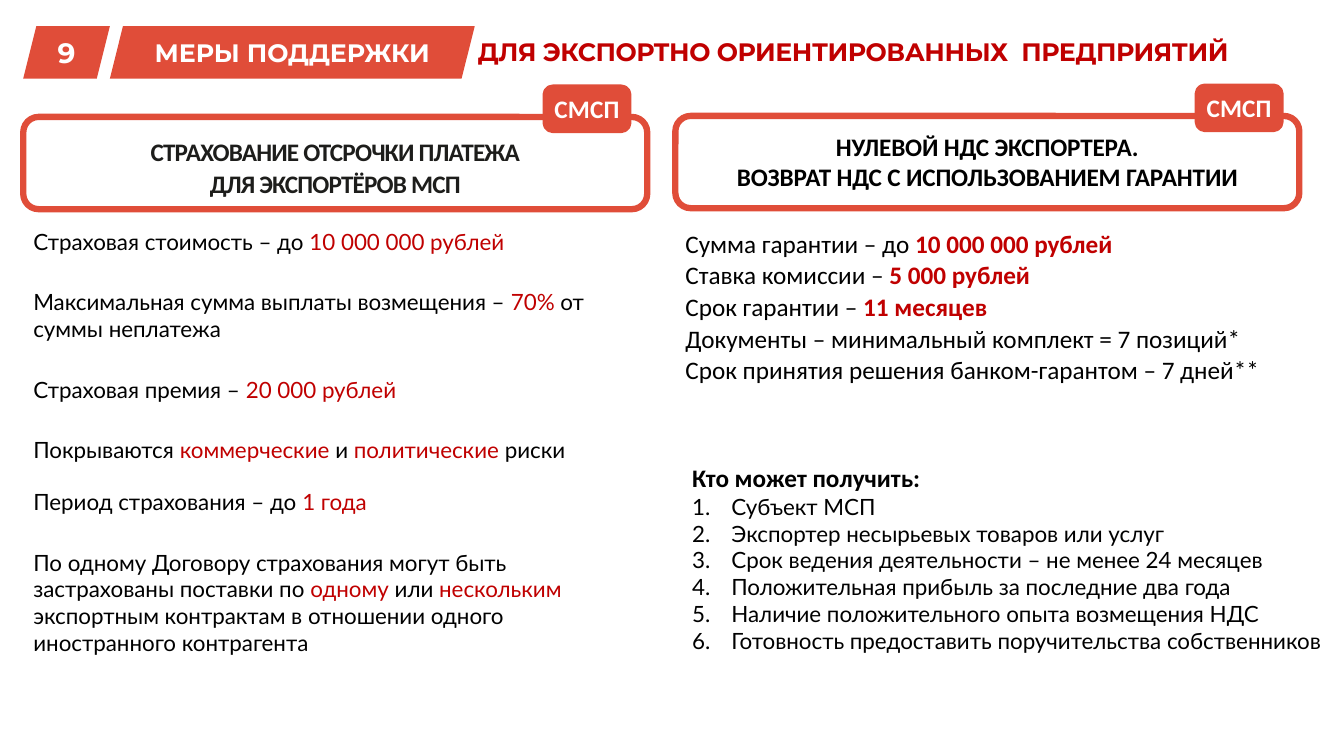
from lxml import etree
from pptx import Presentation
from pptx import util as u
from pptx.dml.color import RGBColor
from pptx.enum import shapes, text
from pptx.oxml.ns import qn

RED, ACCENT, BLACK, WHITE = "E04D39", "C00000", "000000", "FFFFFF"
CENTER, JUSTIFY = text.PP_ALIGN.CENTER, text.PP_ALIGN.JUSTIFY
MIDDLE, TOP = text.MSO_ANCHOR.MIDDLE, text.MSO_ANCHOR.TOP


def color(hex_string):
    return RGBColor.from_string(hex_string)


class SlideBuilder:
    def __init__(self, slide):
        self.slide = slide

    def paragraph(self, frame, index, content, font="Calibri", size=18, ink=BLACK,
                  bold=False, accent_bold=False, align=text.PP_ALIGN.LEFT,
                  tracking=0, before=0, after=0, line=1.0, numbered=False):
        paragraph = frame.paragraphs[0] if index == 0 else frame.add_paragraph()
        properties = paragraph._p.get_or_add_pPr()
        indent = u.Pt(28) if numbered else 0
        properties.set("marL", str(indent))
        properties.set("indent", str(-indent))
        if numbered:
            bullet = etree.SubElement(properties, qn("a:buAutoNum"))
            bullet.set("type", "arabicPeriod")
        else:
            etree.SubElement(properties, qn("a:buNone"))
        paragraph.alignment = align
        paragraph.line_spacing = line
        paragraph.space_before, paragraph.space_after = u.Pt(before), u.Pt(after)
        paragraph.font.name, paragraph.font.size = font, u.Pt(size)
        paragraph.font.bold = bold
        paragraph.font.color.rgb = color(ink)
        if tracking:
            paragraph.font._rPr.set("spc", str(round(tracking * 100)))
        for position, part in enumerate(content.split("|")):
            run = paragraph.add_run()
            run.text = part
            if position % 2:
                run.font.color.rgb = color(ACCENT)
                if accent_bold:
                    run.font.bold = True

    def fill_text(self, shape, lines, anchor=TOP, wrap=True, **style):
        frame = shape.text_frame
        frame.word_wrap, frame.vertical_anchor = wrap, anchor
        frame.auto_size = text.MSO_AUTO_SIZE.NONE
        for index, content in enumerate(lines):
            overrides = {}
            if isinstance(content, tuple):
                content, overrides = content
            self.paragraph(frame, index, content, **{**style, **overrides})

    def placeholder(self, number, box, lines, **style):
        shape = self.slide.placeholders[number]
        shape.left, shape.top, shape.width, shape.height = map(u.Pt, box)
        self.fill_text(shape, lines, **style)

    def text_box(self, box, lines, **style):
        shape = self.slide.shapes.add_textbox(*map(u.Pt, box))
        self.fill_text(shape, lines, **style)

    def shape(self, kind, box, fill=None, line=None):
        shape = self.slide.shapes.add_shape(kind, *map(u.Pt, box))
        shape.shadow.inherit = False
        if fill:
            shape.fill.solid()
            shape.fill.fore_color.rgb = color(fill)
        else:
            shape.fill.background()
        if line:
            shape.line.color.rgb = color(line)
            shape.line.width = u.Pt(4.5)
        else:
            shape.line.fill.background()
        return shape

    def label(self, shape, content, **style):
        frame = shape.text_frame
        frame.margin_left = frame.margin_right = 0
        frame.margin_top = frame.margin_bottom = 0
        self.fill_text(shape, [content], anchor=MIDDLE, wrap=False,
                       align=CENTER, ink=WHITE, bold=True, **style)

    def tab(self, left, width, content, size):
        shape = self.shape(shapes.MSO_SHAPE.PARALLELOGRAM,
                           (left, 18.7, width, 37.4), fill=RED)
        self.label(shape, content, font="Montserrat", size=size)

    def framed_heading(self, left, top):
        self.shape(shapes.MSO_SHAPE.ROUNDED_RECTANGLE,
                   (left, top, 445.7, 65.9), line=RED)
        badge = self.shape(shapes.MSO_SHAPE.FLOWCHART_ALTERNATE_PROCESS,
                           (left + 373.2, top - 20.9, 59, 30.2), fill=RED, line=RED)
        self.label(badge, "СМСП", tracking=0.1)


def main():
    presentation = Presentation()
    presentation.slide_width, presentation.slide_height = u.Pt(960), u.Pt(540)
    comparison_layout = presentation.slide_layouts[4]
    builder = SlideBuilder(presentation.slides.add_slide(comparison_layout))

    builder.tab(16.6, 61.9, "9", 20)
    builder.tab(78.5, 260.6, "МЕРЫ ПОДДЕРЖКИ", 18)
    builder.placeholder(
        0, (334.1, 22.3, 590, 29),
        ["ДЛЯ ЭКСПОРТНО ОРИЕНТИРОВАННЫХ  ПРЕДПРИЯТИЙ"],
        font="Montserrat", ink=ACCENT, bold=True, tracking=-0.3, wrap=False)

    builder.framed_heading(16.6, 83.5)
    builder.placeholder(
        1, (16.6, 93.6, 445.7, 52),
        ["СТРАХОВАНИЕ ОТСРОЧКИ ПЛАТЕЖА", "ДЛЯ ЭКСПОРТЁРОВ МСП"],
        ink="1D1D1B", bold=True, align=CENTER, tracking=-0.6, line=1.01, before=0.8)
    builder.placeholder(
        2, (16.6, 159.1, 445.7, 296.6),
        ["Страховая стоимость – до |10 000 000 рублей",
         "Максимальная сумма выплаты возмещения – |70%| от суммы неплатежа",
         "Страховая премия – |20 000 рублей",
         ("Покрываются |коммерческие| и |политические| риски", {"after": 18}),
         "Период страхования – до |1 года",
         "По одному Договору страхования могут быть застрахованы поставки по "
         "|одному| или |нескольким| экспортным контрактам в отношении одного "
         "иностранного контрагента"],
        font="Lato", size=16, after=24)

    builder.framed_heading(482.4, 82.8)
    builder.placeholder(
        3, (482.4, 90, 445.7, 51),
        ["НУЛЕВОЙ НДС ЭКСПОРТЕРА.", "ВОЗВРАТ НДС С ИСПОЛЬЗОВАНИЕМ ГАРАНТИИ"],
        bold=True, align=CENTER, tracking=-0.1)
    builder.placeholder(
        4, (482.4, 159.1, 468, 121),
        ["Сумма гарантии – до |10 000 000 рублей",
         "Ставка комиссии – |5 000 рублей",
         "Срок гарантии – |11 месяцев",
         "Документы – минимальный комплект = 7 позиций*",
         "Срок принятия решения банком-гарантом – 7 дней**"],
        accent_bold=True, align=JUSTIFY, line=1.01, before=0.8)

    builder.text_box(
        (487.4, 326.9, 472.3, 145.4),
        [("Кто может получить:",
          {"font": "Calibri", "size": 18, "bold": True, "numbered": False}),
         "Субъект МСП",
         "Экспортер несырьевых товаров или услуг",
         "Срок ведения деятельности – не менее 24 месяцев",
         "Положительная прибыль за последние два года",
         "Наличие положительного опыта возмещения НДС",
         "Готовность предоставить поручительства собственников"],
        font="Lato", size=16, numbered=True)

    presentation.save("out.pptx")


if __name__ == "__main__":
    main()
